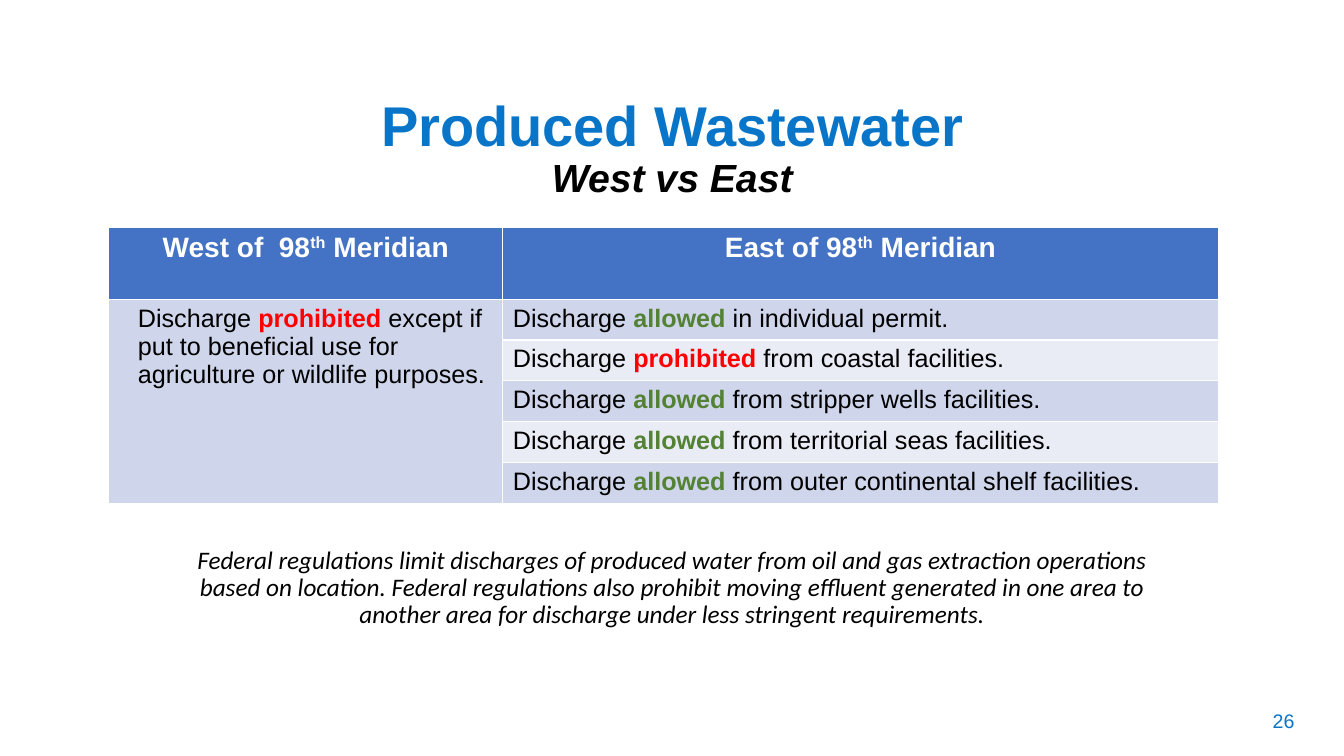
from lxml.etree import SubElement
from pptx import Presentation
from pptx.dml.color import RGBColor
from pptx.enum.text import MSO_ANCHOR, MSO_AUTO_SIZE, PP_ALIGN
from pptx.oxml.ns import qn
from pptx.util import Cm, Pt

BLUE = RGBColor(0x08, 0x75, 0xC8)
BLACK = RGBColor(0, 0, 0)
WHITE = RGBColor(0xFF, 0xFF, 0xFF)
RED = RGBColor(0xFF, 0, 0)
GREEN = RGBColor(0x54, 0x82, 0x35)
HEADER_FILL = RGBColor(0x44, 0x72, 0xC4)
DARK_BAND = RGBColor(0xCF, 0xD5, 0xEA)
LIGHT_BAND = RGBColor(0xE9, 0xEB, 0xF5)
VERDICT_COLORS = {"allowed": GREEN, "prohibited": RED}


def style(run, size, color, bold=False, italic=False, face="Arial"):
    run.font.name = face
    run.font.size = Pt(size)
    run.font.color.rgb = color
    run.font.bold = bold
    run.font.italic = italic


def write_rule(paragraph, verdict, ending):
    for words in ("Discharge ", verdict, ending):
        run = paragraph.add_run()
        run.text = words
        style(run, 18, VERDICT_COLORS.get(words, BLACK), bold=words == verdict)


prs = Presentation()
prs.slide_width, prs.slide_height = Cm(33.87), Cm(19.05)
slide = prs.slides.add_slide(prs.slide_layouts[0])

title = slide.shapes.title
title.left, title.top, title.width, title.height = Cm(4.24), Cm(2.06), Cm(25.4), Cm(3.12)
title.text_frame.auto_size = MSO_AUTO_SIZE.NONE
title.text_frame.vertical_anchor = MSO_ANCHOR.BOTTOM
heading = title.text_frame.paragraphs[0]
heading.text = "Produced Wastewater\vWest vs East"
heading.alignment = PP_ALIGN.CENTER
heading.line_spacing = 0.9
topic, comparison = heading.runs
style(topic, 40, BLUE, bold=True)
style(comparison, 28, BLACK, bold=True, italic=True)
SubElement(heading._p.find(qn("a:br")), qn("a:rPr"), sz="4000")

summary = slide.placeholders[1]
summary.left, summary.top, summary.width, summary.height = Cm(4.24), Cm(13.67), Cm(25.4), Cm(3.33)
summary.text_frame.auto_size = MSO_AUTO_SIZE.NONE
regulations = summary.text_frame.paragraphs[0]
regulations.text = (
    "Federal regulations limit discharges of produced water from oil and gas extraction "
    "operations based on location. Federal regulations also prohibit moving effluent "
    "generated in one area to another area for discharge under less stringent requirements."
)
regulations.alignment = PP_ALIGN.CENTER
regulations.line_spacing = 0.9
regulations.space_before = Pt(0)
style(regulations.runs[0], 18, BLACK, italic=True, face="Calibri")

page_number = slide.shapes.add_textbox(Cm(31.22), Cm(17.65), Cm(2.26), Cm(1.02))
page_number.text_frame.word_wrap = True
page_number.text_frame.vertical_anchor = MSO_ANCHOR.MIDDLE
page = page_number.text_frame.paragraphs[0]
page.text = "26"
page.alignment = PP_ALIGN.CENTER
style(page.runs[0], 14, BLUE)

east_rules = [
    ("allowed", " in individual permit."),
    ("prohibited", " from coastal facilities."),
    ("allowed", " from stripper wells facilities."),
    ("allowed", " from territorial seas facilities."),
    ("allowed", " from outer continental shelf facilities."),
]
row_heights = [1.83, 0.98] + [1.03] * 4
rules = slide.shapes.add_table(
    len(row_heights), 2, Cm(2.74), Cm(5.72), Cm(27.96), Cm(sum(row_heights))
).table
rules.columns[0].width, rules.columns[1].width = Cm(9.93), Cm(18.03)
for row, height in zip(rules.rows, row_heights):
    row.height = Cm(height)

for column, side in enumerate(("West of  98", "East of 98")):
    header = rules.cell(0, column)
    header.fill.solid()
    header.fill.fore_color.rgb = HEADER_FILL
    meridian = header.text_frame.paragraphs[0]
    meridian.alignment = PP_ALIGN.CENTER
    for words in (side, "th", " Meridian"):
        run = meridian.add_run()
        run.text = words
        style(run, 20, WHITE, bold=True)
        if words == "th":
            run._r.get_or_add_rPr().set("baseline", "30000")

west = rules.cell(1, 0)
west.merge(rules.cell(len(east_rules), 0))
west.fill.solid()
west.fill.fore_color.rgb = DARK_BAND
west_rule = west.text_frame.paragraphs[0]
west_rule._p.get_or_add_pPr().set("marL", str(Cm(0.48)))
write_rule(west_rule, "prohibited", " except if put to beneficial use for agriculture or wildlife purposes.")

for number, (verdict, ending) in enumerate(east_rules, start=1):
    east = rules.cell(number, 1)
    east.fill.solid()
    east.fill.fore_color.rgb = DARK_BAND if number % 2 else LIGHT_BAND
    write_rule(east.text_frame.paragraphs[0], verdict, ending)

prs.save("out.pptx")
